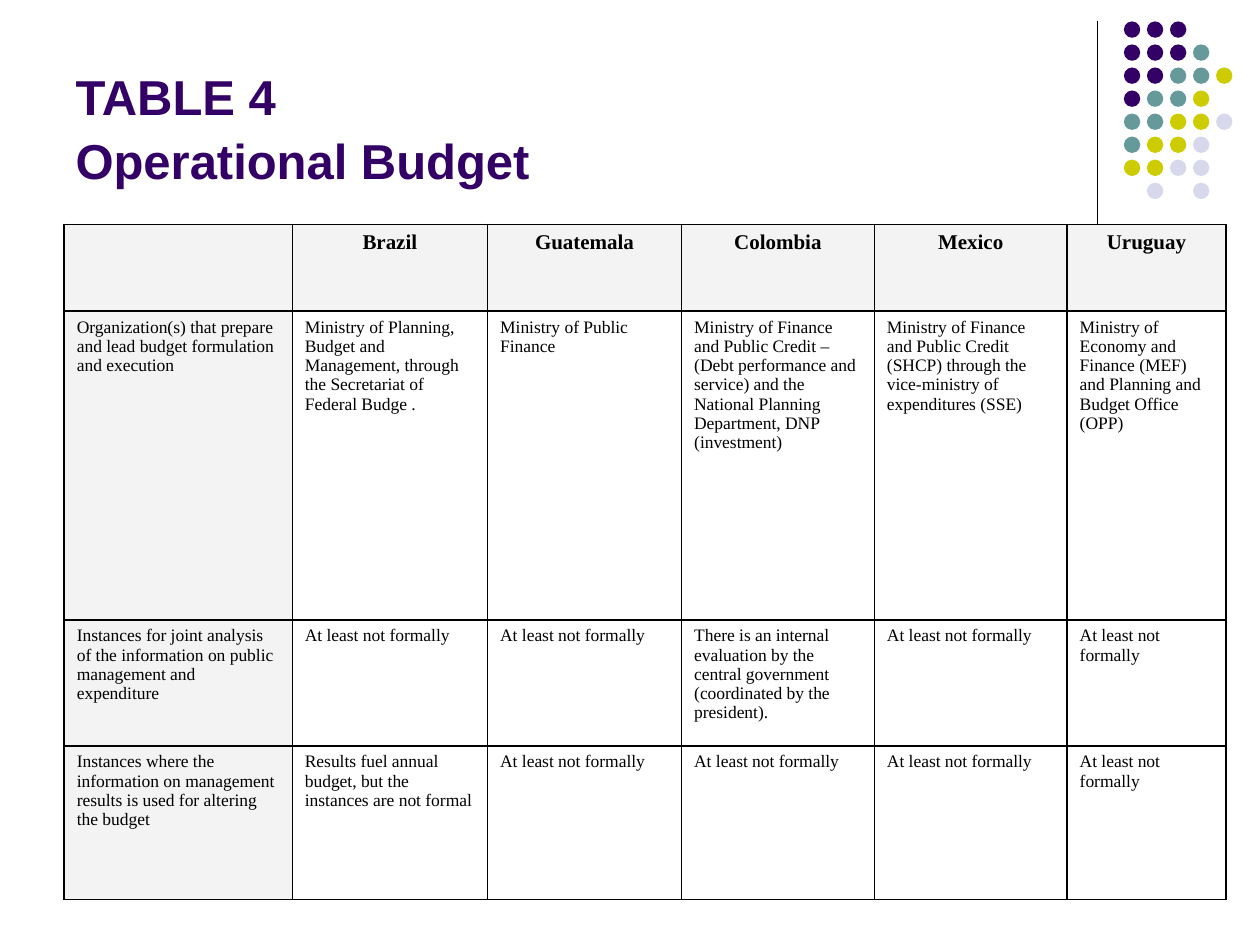
from copy import deepcopy
from dataclasses import dataclass

from lxml import etree
from pptx import Presentation
from pptx.dml.color import RGBColor
from pptx.enum.shapes import MSO_CONNECTOR, MSO_SHAPE
from pptx.enum.text import MSO_ANCHOR, MSO_AUTO_SIZE, PP_ALIGN
from pptx.oxml.ns import qn
from pptx.util import Inches, Pt

LEFT, CENTER = PP_ALIGN.LEFT, PP_ALIGN.CENTER
BOTTOM = MSO_ANCHOR.BOTTOM
NO_AUTOFIT = MSO_AUTO_SIZE.NONE
OVAL = MSO_SHAPE.OVAL
STRAIGHT = MSO_CONNECTOR.STRAIGHT
TITLE_ONLY = 5


@dataclass(frozen=True)
class Theme:
    purple: str = "330066"
    teal: str = "669999"
    lime: str = "CCCC00"
    lavender: str = "D8D8EC"
    black: str = "000000"
    shade: str = "F3F3F3"
    title_font: str = "Arial"
    table_font: str = "Times New Roman"
    title_size: float = 28
    header_size: float = 12
    body_size: float = 10
    border: float = 1
    thin: float = 0.75


@dataclass(frozen=True)
class DotGrid:
    left: float
    top: float
    pitch: float
    diameter: float
    rows: tuple[str, ...]


@dataclass(frozen=True)
class TableGrid:
    left: float
    top: float
    columns: tuple[float, ...]
    rows: tuple[float, ...]


THEME = Theme()
DOT_COLORS = {"P": THEME.purple, "T": THEME.teal,
              "L": THEME.lime, "V": THEME.lavender}
DOTS = DotGrid(8.92, 0.17, 1.28 / 7, 0.13,
               ("PPP", "PPPT", "PPTTL", "PTTL", "TTLLV", "TLLV", "LLVV", ".V.V"))
GRID = TableGrid(0.51, 1.78, (1.81, 1.55, 1.54, 1.53, 1.53, 1.26),
                 (0.69, 2.45, 1, 1.22))
NOT_FORMALLY = "At least not formally"
CELLS = (
    ("", "Brazil", "Guatemala", "Colombia", "Mexico", "Uruguay"),
    ("Organization(s) that prepare and lead budget formulation and execution",
     "Ministry of Planning, Budget and Management, through the Secretariat of "
     "Federal Budge .",
     "Ministry of Public Finance",
     "Ministry of Finance and Public Credit – (Debt performance and service) "
     "and the National Planning Department, DNP (investment)",
     "Ministry of Finance and Public Credit (SHCP) through the vice-ministry "
     "of expenditures (SSE)",
     "Ministry of Economy and Finance (MEF) and Planning and Budget Office (OPP)"),
    ("Instances for joint analysis of the information on public management "
     "and expenditure",
     NOT_FORMALLY, NOT_FORMALLY,
     "There is an internal evaluation by the central government (coordinated "
     "by the president).",
     NOT_FORMALLY, NOT_FORMALLY),
    ("Instances where the information on management results is used for "
     "altering the budget",
     "Results fuel annual budget, but the instances are not formal",
     *[NOT_FORMALLY] * 4),
)


def write_text(frame, text: str, *, font: str, size: float, color: str,
               bold: bool = False, align=LEFT, spacing: float = 1.0) -> None:
    paragraph = frame.paragraphs[0]
    paragraph.text = text
    paragraph.alignment = align
    paragraph.line_spacing = spacing
    for run in paragraph.runs:
        run.font.name = font
        run.font.size = Pt(size)
        run.font.bold = bold
        run.font.color.rgb = RGBColor.from_string(color)
    # Line breaks take the format of the first run
    for line_break in paragraph._p.findall(qn("a:br")):
        line_break.insert(0, deepcopy(paragraph.runs[0]._r.find(qn("a:rPr"))))


def draw_title(slide) -> None:
    title = slide.shapes.title
    title.left, title.top = Inches(0.5), Inches(0.13)
    title.width, title.height = Inches(8.25), Inches(1.42)
    title.text_frame.auto_size = NO_AUTOFIT
    title.text_frame.word_wrap = True
    title.text_frame.vertical_anchor = BOTTOM
    write_text(title.text_frame, "TABLE 4\nOperational Budget",
               font=THEME.title_font, size=THEME.title_size,
               color=THEME.purple, bold=True, spacing=1.08)


def draw_rule(slide, x: float, top: float, bottom: float) -> None:
    rule = slide.shapes.add_connector(
        STRAIGHT, Inches(x), Inches(top), Inches(x), Inches(bottom))
    rule.line.color.rgb = RGBColor.from_string(THEME.black)
    rule.line.width = Pt(THEME.thin)
    etree.SubElement(rule._element.spPr, qn("a:effectLst"))


def draw_dots(slide, grid: DotGrid) -> None:
    group = slide.shapes.add_group_shape()
    for row, pattern in enumerate(grid.rows):
        for column, key in enumerate(pattern):
            if key not in DOT_COLORS:
                continue
            dot = group.shapes.add_shape(
                OVAL, Inches(grid.left + column * grid.pitch),
                Inches(grid.top + row * grid.pitch),
                Inches(grid.diameter), Inches(grid.diameter))
            dot.shadow.inherit = False
            dot.fill.solid()
            dot.fill.fore_color.rgb = RGBColor.from_string(DOT_COLORS[key])
            dot.line.fill.background()


def set_borders(cell, bottom_width: float) -> None:
    properties = cell._tc.get_or_add_tcPr()
    widths = {"lnL": THEME.border, "lnR": THEME.border,
              "lnT": THEME.border, "lnB": bottom_width}
    for position, (side, width) in enumerate(widths.items()):
        line = etree.Element(qn(f"a:{side}"), w=str(Pt(width)))
        fill = etree.SubElement(line, qn("a:solidFill"))
        etree.SubElement(fill, qn("a:srgbClr"), val=THEME.black)
        properties.insert(position, line)


def draw_table(slide, grid: TableGrid) -> None:
    table = slide.shapes.add_table(
        len(grid.rows), len(grid.columns), Inches(grid.left), Inches(grid.top),
        Inches(sum(grid.columns)), Inches(sum(grid.rows))).table
    table.first_row = table.horz_banding = False
    for column, width in zip(table.columns, grid.columns):
        column.width = Inches(width)
    for row, height in zip(table.rows, grid.rows):
        row.height = Inches(height)

    for row, texts in enumerate(CELLS):
        header = row == 0
        for column, text in enumerate(texts):
            cell = table.cell(row, column)
            if header or column == 0:
                cell.fill.solid()
                cell.fill.fore_color.rgb = RGBColor.from_string(THEME.shade)
            else:
                cell.fill.background()
            last = row == len(CELLS) - 1
            set_borders(cell, THEME.thin if last else THEME.border)
            if text:
                write_text(cell.text_frame, text, font=THEME.table_font,
                           size=THEME.header_size if header else THEME.body_size,
                           color=THEME.black, bold=header,
                           align=CENTER if header else LEFT)


def main() -> None:
    presentation = Presentation()
    presentation.slide_width, presentation.slide_height = Inches(10), Inches(7.5)
    slide = presentation.slides.add_slide(presentation.slide_layouts[TITLE_ONLY])
    # Corner decoration
    draw_rule(slide, 8.71, 0.17, 1.83)
    draw_dots(slide, DOTS)
    # Content
    draw_title(slide)
    draw_table(slide, GRID)
    presentation.save("out.pptx")


if __name__ == "__main__":
    main()
